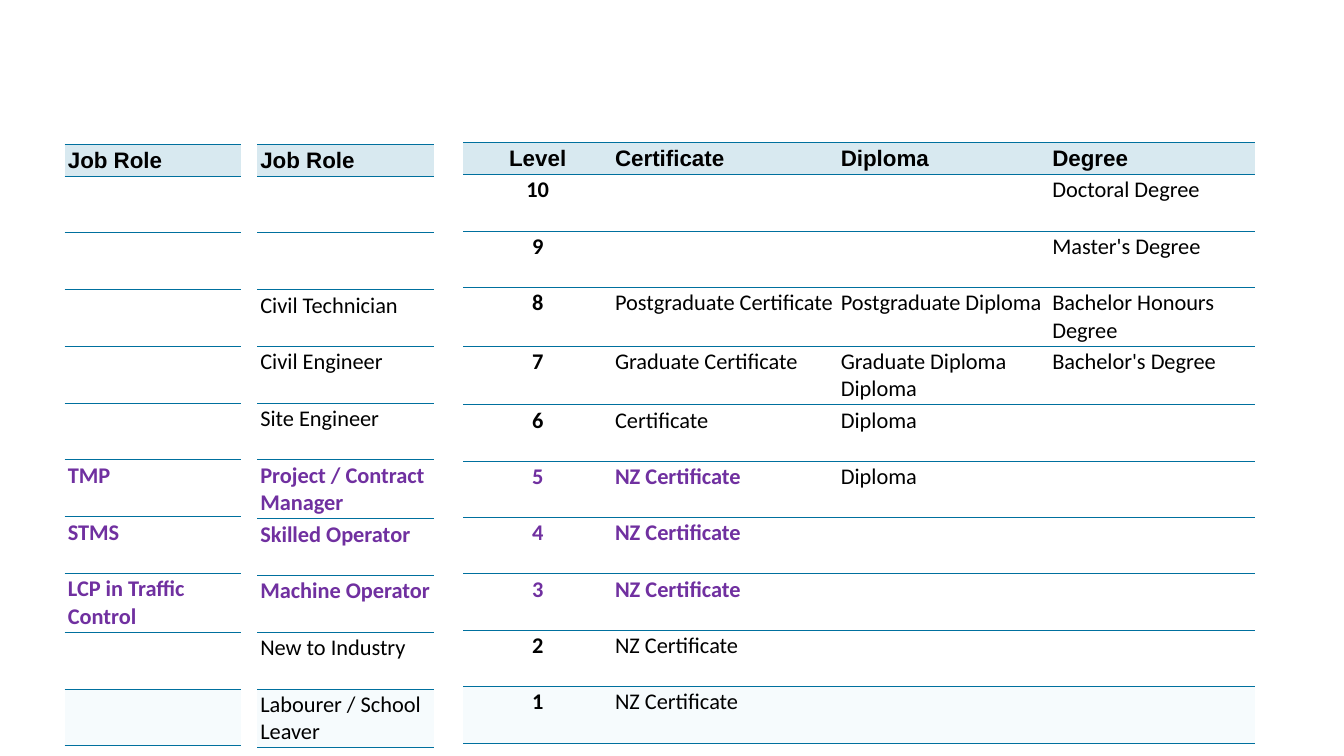
import pptx
import pptx.dml.color
import pptx.enum.text
import pptx.oxml
import pptx.oxml.ns
import pptx.util

COLOURS = {
    "header": "D8E9F0",
    "plain": "FFFFFF",
    "entry": "F6FBFD",
    "rule": "00709E",
    "text": "000000",
    "highlight": "7030A0",
}
HIGHLIGHT_ROWS = (6, 7, 8)
LAST_ROW = 10

TRAFFIC_ROLES = [
    ["Job Role"], [""], [""], [""], [""], [""],
    ["TMP"], ["STMS"], ["LCP in Traffic Control"], [""], [""],
]
CIVIL_ROLES = [
    ["Job Role"], [""], [""], ["Civil Technician"], ["Civil Engineer"], ["Site Engineer"],
    ["Project / Contract Manager"], ["Skilled Operator"], ["Machine Operator"],
    ["New to Industry"], ["Labourer / School Leaver"],
]
QUALIFICATIONS = [
    ["Level", "Certificate", "Diploma", "Degree"],
    ["10", "", "", "Doctoral Degree"],
    ["9", "", "", "Master's Degree"],
    ["8", "Postgraduate Certificate", "Postgraduate Diploma", "Bachelor Honours Degree"],
    ["7", "Graduate Certificate", "Graduate Diploma\nDiploma", "Bachelor's Degree"],
    ["6", "Certificate", "Diploma", ""],
    ["5", "NZ Certificate", "Diploma", ""],
    ["4", "NZ Certificate", "", ""],
    ["3", "NZ Certificate", "", ""],
    ["2", "NZ Certificate", "", ""],
    ["1", "NZ Certificate", "", ""],
]


class SlideBuilder:
    header_font = "Arial"
    body_font = "Calibri"
    text_size = pptx.util.Pt(16)
    header_height = pptx.util.Cm(0.8)

    def __init__(self, slide):
        self.slide = slide

    def add_borders(self, cell):
        properties = cell._tc.get_or_add_tcPr()
        namespace = pptx.oxml.ns.nsdecls("a")
        for side in ("lnL", "lnR"):
            properties.append(pptx.oxml.parse_xml(
                f'<a:{side} {namespace} w="0"><a:noFill/></a:{side}>'))
        for side in ("lnT", "lnB"):
            properties.append(pptx.oxml.parse_xml(
                f'<a:{side} {namespace} w="{pptx.util.Pt(0.75)}"><a:solidFill>'
                f'<a:srgbClr val="{COLOURS["rule"]}"/></a:solidFill></a:{side}>'))

    def add_fill(self, cell, row):
        if row in HIGHLIGHT_ROWS:
            cell.fill.background()
            return
        name = {0: "header", LAST_ROW: "entry"}.get(row, "plain")
        cell.fill.solid()
        cell.fill.fore_color.rgb = pptx.dml.color.RGBColor.from_string(COLOURS[name])

    def add_text(self, cell, text, row, is_level, highlighted):
        frame = cell.text_frame
        for index, line in enumerate(text.split("\n")):
            paragraph = frame.add_paragraph() if index else frame.paragraphs[0]
            if is_level:
                paragraph.alignment = pptx.enum.text.PP_ALIGN.CENTER
            paragraph.font.size = self.text_size
            if not line:
                continue
            run = paragraph.add_run()
            run.text = line
            run.font.size = self.text_size
            run.font.name = self.body_font if row else self.header_font
            run.font.bold = row == 0 or is_level or highlighted
            colour = COLOURS["highlight" if highlighted else "text"]
            run.font.color.rgb = pptx.dml.color.RGBColor.from_string(colour)

    def add_table(self, left, top, widths, row_height, rows):
        heights = [self.header_height] + [row_height] * (len(rows) - 1)
        table = self.slide.shapes.add_table(
            len(rows), len(widths), left, top, sum(widths), sum(heights)).table
        table.horz_banding = False
        for column, width in zip(table.columns, widths):
            column.width = width
        for row, height in enumerate(heights):
            table.rows[row].height = height
            for column, text in enumerate(rows[row]):
                cell = table.cell(row, column)
                is_level = len(widths) > 1 and column == 0
                cell.margin_left = cell.margin_right = pptx.util.Cm(0.08)
                cell.margin_top = pptx.util.Cm(0.05 if row else 0.08)
                cell.margin_bottom = pptx.util.Cm(
                    0.08 if row == 0 else 0 if is_level else 0.05)
                cell.vertical_anchor = (
                    pptx.enum.text.MSO_ANCHOR.TOP if row
                    else pptx.enum.text.MSO_ANCHOR.MIDDLE)
                self.add_borders(cell)
                self.add_fill(cell, row)
                highlighted = row in HIGHLIGHT_ROWS and column < 2
                self.add_text(cell, text, row, is_level, highlighted)


def main():
    presentation = pptx.Presentation()
    presentation.slide_width = pptx.util.Cm(33.87)
    presentation.slide_height = pptx.util.Cm(19.05)
    builder = SlideBuilder(presentation.slides.add_slide(presentation.slide_layouts[6]))

    level_widths = [pptx.util.Cm(width) for width in (3.74, 5.69, 5.33, 5.18)]
    builder.add_table(pptx.util.Cm(11.68), pptx.util.Cm(3.6), level_widths,
                      pptx.util.Cm(1.42), QUALIFICATIONS)
    for left, roles in ((6.48, CIVIL_ROLES), (1.63, TRAFFIC_ROLES)):
        builder.add_table(pptx.util.Cm(left), pptx.util.Cm(3.64), [pptx.util.Cm(4.45)],
                          pptx.util.Cm(1.43), roles)

    presentation.save("out.pptx")


if __name__ == "__main__":
    main()
